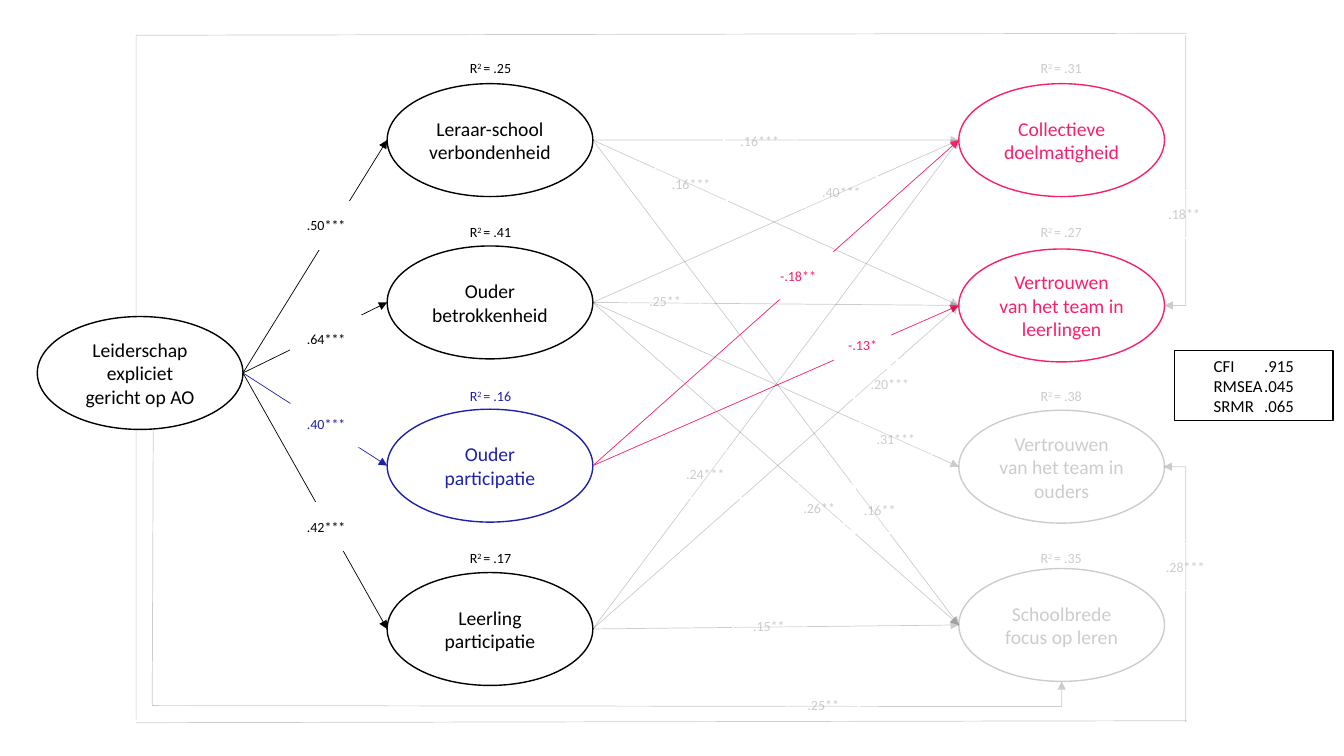
import pptx
import pptx.dml.color
import pptx.enum.shapes
import pptx.enum.text
import pptx.oxml
import pptx.oxml.ns
import pptx.util

Inches = pptx.util.Inches
Pt = pptx.util.Pt
SHAPE = pptx.enum.shapes.MSO_SHAPE
qn = pptx.oxml.ns.qn
A = pptx.oxml.ns.nsdecls("a")

BLACK = pptx.dml.color.RGBColor(0x00, 0x00, 0x00)
WHITE = pptx.dml.color.RGBColor(0xFF, 0xFF, 0xFF)
BLUE = pptx.dml.color.RGBColor(0x1E, 0x22, 0xAA)
PINK = pptx.dml.color.RGBColor(0xF8, 0x20, 0x6D)

deck = pptx.Presentation()
deck.slide_width, deck.slide_height = Inches(13.33), Inches(7.5)
slide = deck.slides.add_slide(deck.slide_layouts[6])
faded = []  # elements shown at 20 % opacity


def add_box(kind, left, top, width, height, lines, size, ink, outline):
    box = slide.shapes.add_shape(kind, Inches(left), Inches(top), Inches(width), Inches(height))
    box.shadow.inherit = False
    box.fill.solid()
    box.fill.fore_color.rgb = WHITE
    if outline is None:
        box.line.fill.background()
    else:
        box.line.color.rgb = outline
        box.line.width = Pt(1)
    frame = box.text_frame
    frame.word_wrap = True
    frame.vertical_anchor = pptx.enum.text.MSO_ANCHOR.MIDDLE
    frame.text = lines
    for paragraph in frame.paragraphs:
        paragraph.alignment = pptx.enum.text.PP_ALIGN.CENTER
        paragraph.font.name = "Calibri"
        paragraph.font.size = Pt(size)
        paragraph.font.color.rgb = ink
    return box


def add_path(x1, y1, x2, y2, ink=None, arrow=True):
    path = slide.shapes.add_connector(pptx.enum.shapes.MSO_CONNECTOR.STRAIGHT,
                                      Inches(x1), Inches(y1), Inches(x2), Inches(y2))
    path.line.color.rgb = ink or BLACK
    path.line.width = Pt(0.5)
    if arrow:
        path.line._get_or_add_ln().append(pptx.oxml.parse_xml(f'<a:tailEnd {A} type="triangle"/>'))
    path._element.spPr.append(pptx.oxml.parse_xml(f"<a:effectLst {A}/>"))
    if ink is None:
        faded.append(path._element)


# Shared positions
LEADER_RIGHT, MEDIATOR_LEFT, MEDIATOR_RIGHT, OUTCOME_LEFT = 2.41, 3.84, 5.88, 9.51
MEDIATOR_Y = [1.39, 3.0, 4.62, 6.24]
OUTCOME_Y = [1.39, 3.03, 4.63, 6.2]
LABEL_W, LABEL_H = 0.71, 0.47
OVAL_W, OVAL_H = 2.04, 1.12
MEDIATOR_INKS = [BLACK, BLACK, BLUE, BLACK]

# Explained variance above each oval
r_squared_tops = [0.44, 2.07, 3.69, 5.3]
for left, values, inks in ((10.17, [".31", ".27", ".38", ".35"], [None] * 4),
                           (4.51, [".25", ".41", ".16", ".17"], MEDIATOR_INKS)):
    for top, value, ink in zip(r_squared_tops, values, inks):
        r_squared = add_box(SHAPE.RECTANGLE, left, top, LABEL_W, LABEL_H, "", 10, ink or BLACK, WHITE)
        paragraph = r_squared.text_frame.paragraphs[0]
        for text, baseline in (("R", None), ("2 ", "30000"), (f"= {value}", None)):
            run = paragraph.add_run()
            run.text = text
            if baseline:
                run.font._element.set("baseline", baseline)
        if ink is None:
            faded.append(r_squared._element)

# Leadership to mediators
for y, ink in zip(MEDIATOR_Y, MEDIATOR_INKS):
    add_path(LEADER_RIGHT, 3.7, MEDIATOR_LEFT, y, ink)

# Mediators to outcomes, by row
for source, target, ink in ((0, 0, None), (0, 1, None), (1, 1, None), (1, 3, None),
                            (2, 1, PINK), (3, 0, None), (3, 1, None), (3, 3, None)):
    add_path(MEDIATOR_RIGHT, MEDIATOR_Y[source], OUTCOME_LEFT, OUTCOME_Y[target], ink)

# Direct effects routed round the model
for x1, y1, x2, y2, arrow in (
        (1.35, 3.14, 1.35, 0.35, False), (11.77, 0.33, 1.35, 0.35, False),
        (11.76, 3.03, 11.55, 3.03, True), (11.76, 3.03, 11.76, 0.35, False),
        (1.51, 7, 1.52, 4.27, False), (10.53, 7.01, 1.51, 7, False),
        (10.53, 7.01, 10.53, 6.76, True), (1.35, 7.14, 1.35, 4.27, False),
        (11.76, 4.63, 11.54, 4.63, True), (11.76, 7.16, 11.76, 4.63, False)):
    add_path(x1, y1, x2, y2, arrow=arrow)

# Coefficients, with the remaining paths between the two groups
early_coefficients = [(11.39, 1.89, ".18**"), (7.18, 1.16, ".16***"),
                      (6.5, 1.59, ".16***"), (6.24, 2.75, ".25**")]
late_coefficients = [(7.99, 1.67, ".40***"), (8.37, 4.82, ".16**"), (7.77, 4.8, ".26**"),
                     (7.27, 5.97, ".15**"), (11.4, 5.39, ".28***"), (7.81, 6.76, ".25**"),
                     (8.47, 3.57, ".20***"), (6.64, 4.47, ".24***"), (8.53, 4.12, ".31***")]
for coefficients, later_paths in ((early_coefficients, [(1, 0), (1, 2), (0, 3)]),
                                  (late_coefficients, [])):
    for left, top, value in coefficients:
        label = add_box(SHAPE.RECTANGLE, left, top, LABEL_W, LABEL_H, value, 10, BLACK, WHITE)
        faded.append(label._element)
    if later_paths:
        add_box(SHAPE.RECTANGLE, 8.27, 3.19, 0.57, LABEL_H, "-.13*", 10, PINK, None)
    for source, target in later_paths:
        add_path(MEDIATOR_RIGHT, MEDIATOR_Y[source], OUTCOME_LEFT, OUTCOME_Y[target])
add_path(11.77, 7.15, 1.35, 7.17, arrow=False)

for top, value, ink, outline in ((2, ".50***", BLACK, WHITE), (3.13, ".64***", BLACK, WHITE),
                                 (3.97, ".40***", BLUE, None), (4.99, ".42***", BLACK, WHITE)):
    add_box(SHAPE.RECTANGLE, 2.88, top, LABEL_W, LABEL_H, value, 10, ink, outline)

# Ovals: leadership, mediators, outcomes
for left, middle, concept, ink in (
        (0.37, 3.7, "Leiderschap expliciet gericht op AO", BLACK),
        (MEDIATOR_LEFT, MEDIATOR_Y[0], "Leraar-school verbondenheid", BLACK),
        (MEDIATOR_LEFT, MEDIATOR_Y[1], "Ouder\nbetrokkenheid", BLACK),
        (MEDIATOR_LEFT, MEDIATOR_Y[2], "Ouder\nparticipatie", BLUE),
        (MEDIATOR_LEFT, MEDIATOR_Y[3], "Leerling\nparticipatie", BLACK),
        (OUTCOME_LEFT, OUTCOME_Y[1], "Vertrouwen van het team in leerlingen", PINK),
        (OUTCOME_LEFT, OUTCOME_Y[2], "Vertrouwen van het team in ouders", None),
        (OUTCOME_LEFT, OUTCOME_Y[0], "Collectieve doelmatigheid", PINK),
        (OUTCOME_LEFT, OUTCOME_Y[3], "Schoolbrede focus op leren", None)):
    oval = add_box(SHAPE.OVAL, left, middle - OVAL_H / 2, OVAL_W, OVAL_H, concept, 14,
                   ink or BLACK, ink or BLACK)
    if ink is None:
        faded.append(oval._element)

# Negative effect on collective efficacy
add_path(MEDIATOR_RIGHT, MEDIATOR_Y[2], OUTCOME_LEFT, OUTCOME_Y[0], PINK)
add_box(SHAPE.RECTANGLE, 7.56, 2.5, LABEL_W, LABEL_H, "-.18**", 10, PINK, None)

# Model fit
add_box(SHAPE.RECTANGLE, 11.65, 3.48, 1.57, 0.69,
        "CFI\t.915\nRMSEA\t.045\nSRMR\t.065", 12, BLACK, BLACK)

# Opacity of the faded parts; white label outlines stay solid
for element in faded:
    for colour in element.iter(qn("a:srgbClr")):
        in_outline = colour.getparent().getparent().tag == qn("a:ln")
        if not (in_outline and colour.get("val") == "FFFFFF"):
            colour.append(pptx.oxml.parse_xml(f'<a:alpha {A} val="20000"/>'))

deck.save("out.pptx")
